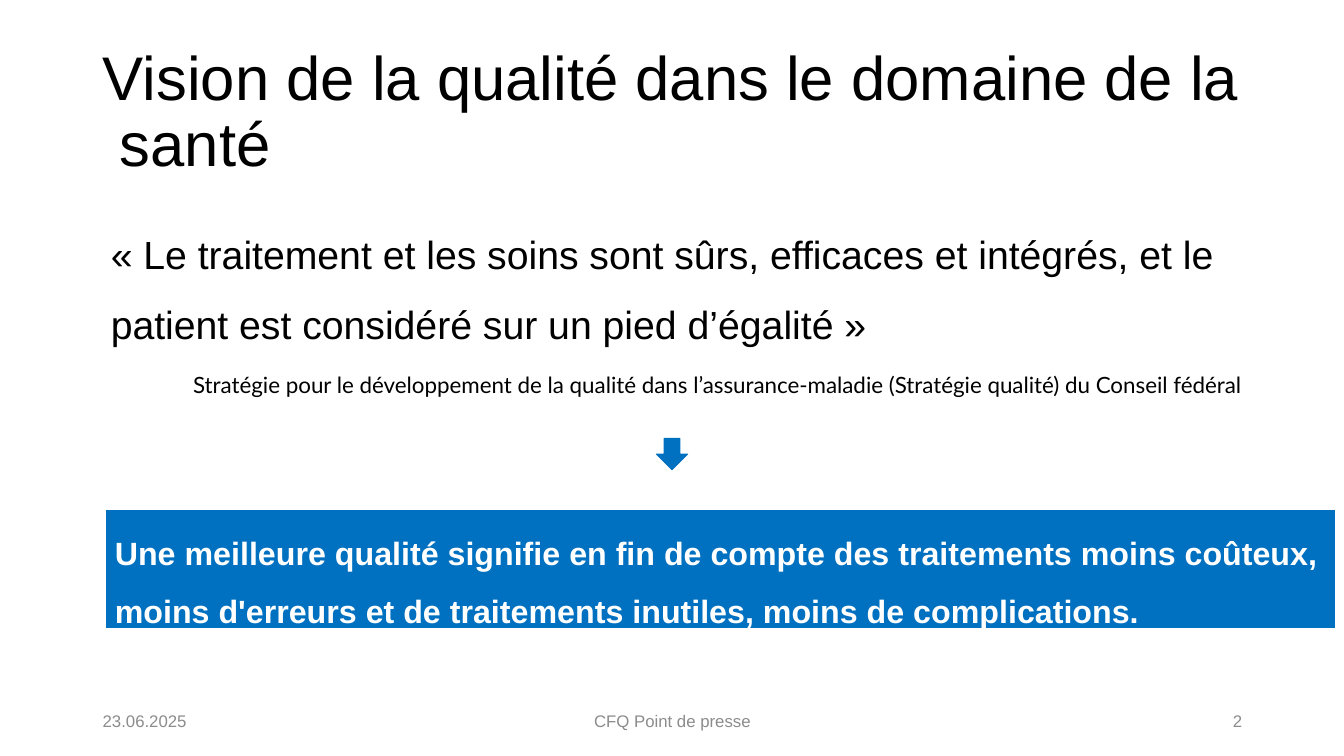
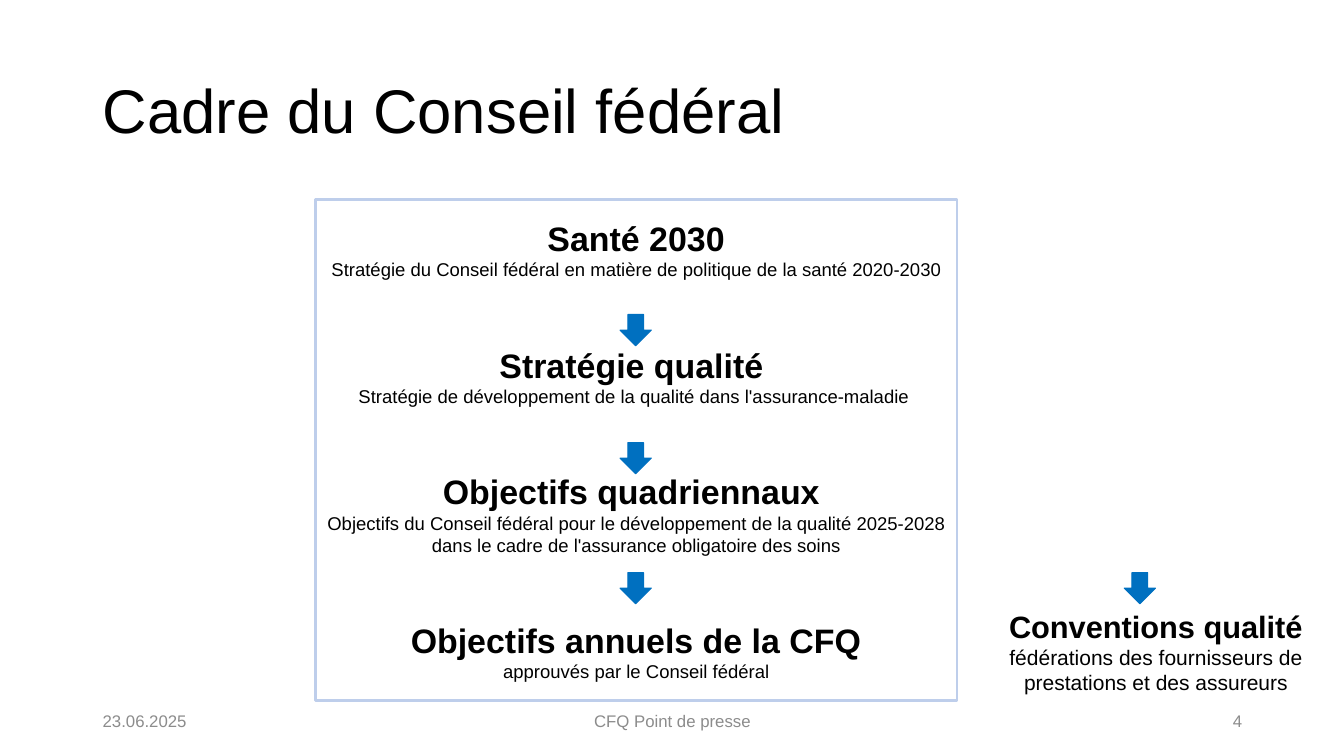
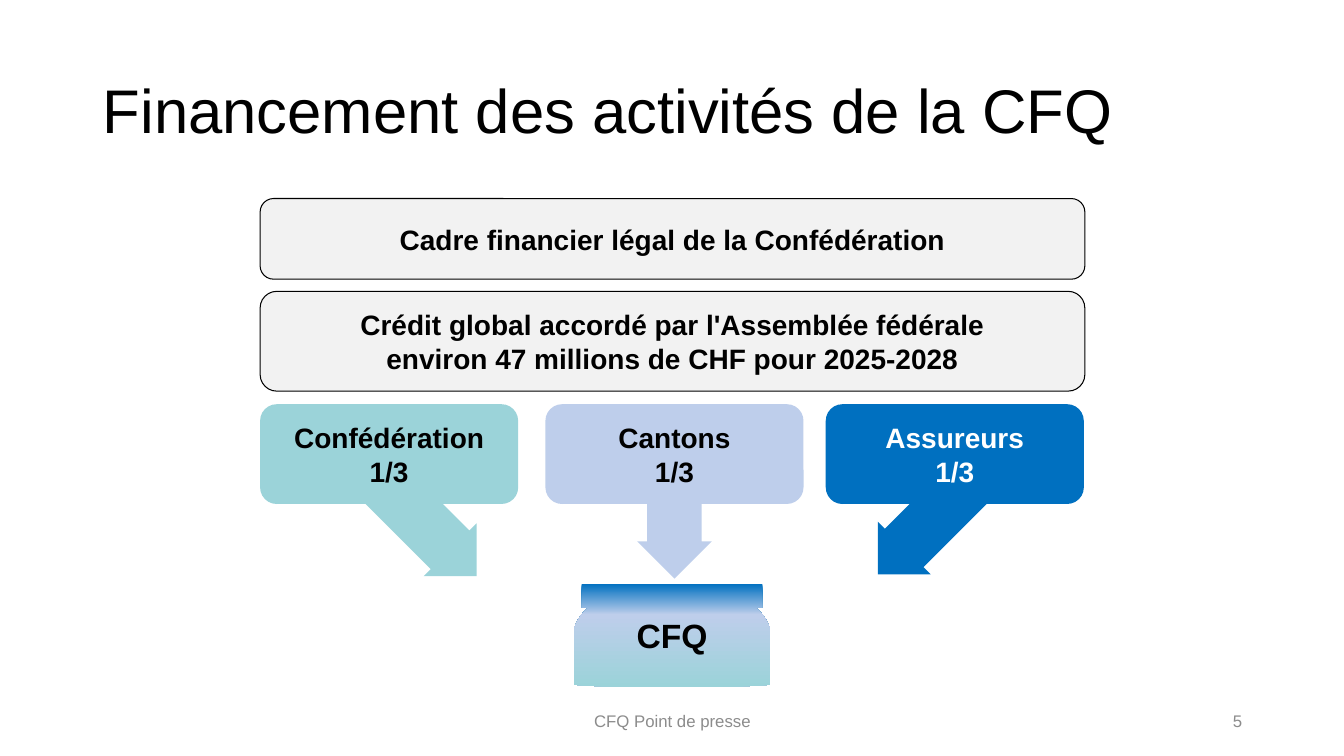
from copy import deepcopy

from pptx import Presentation, util as u
from pptx.dml import color
from pptx.enum import shapes, text
from pptx.oxml import ns

IN = u.Inches
KIND = shapes.MSO_SHAPE
ALIGN = text.PP_ALIGN
MID = text.MSO_ANCHOR.MIDDLE
TOP = text.MSO_ANCHOR.TOP

BLACK = "000000"
WHITE = "FFFFFF"
BLUE = "0070C0"
PALE = "BECEEB"
TEAL = "9BD3D9"
LIGHT = "F2F2F2"
GREY = "8C8C8C"


def rgb(code):
    return color.RGBColor.from_string(code)


def style(font, size, tint=BLACK, bold=False, face="Arial"):
    font.name = face
    font.size = u.Pt(size)
    font.bold = bold
    font.color.rgb = rgb(tint)


def write(shape, lines, size, tint=BLACK, bold=False, face="Arial",
          align=ALIGN.LEFT, anchor=TOP, space=1.0):
    frame = shape.text_frame
    frame.word_wrap = True
    frame.auto_size = text.MSO_AUTO_SIZE.NONE
    frame.vertical_anchor = anchor
    for i, line in enumerate(lines):
        para = frame.add_paragraph() if i else frame.paragraphs[0]
        para.text = line
        para.alignment = align
        para.line_spacing = space
        style(para.font, size, tint, bold, face)


def label(slide, box, line, size, **look):
    shape = slide.shapes.add_textbox(*map(IN, box))
    write(shape, [line], size, **look)


def block(slide, kind, box, fill=None, edge=None, width=0.75):
    shape = slide.shapes.add_shape(kind, *map(IN, box))
    shape.shadow.inherit = False
    if fill:
        shape.fill.solid()
        shape.fill.fore_color.rgb = rgb(fill)
    else:
        shape.fill.background()
    if edge:
        shape.line.color.rgb = rgb(edge)
        shape.line.width = u.Pt(width)
    else:
        shape.line.fill.background()
    return shape


def card(slide, box, lines, fill, tint=BLACK, edge=None):
    shape = block(slide, KIND.ROUNDED_RECTANGLE, box, fill, edge)
    write(shape, lines, 20, tint, True, align=ALIGN.CENTER, anchor=MID)


def arrow(slide, left, top):
    block(slide, KIND.DOWN_ARROW, (left, top, 0.31, 0.31), BLUE, BLUE)


def flow(slide, box, fill, turn):
    shape = block(slide, KIND.DOWN_ARROW, box, fill)
    shape.adjustments[0] = 0.73
    shape.adjustments[1] = 0.5
    shape.rotation = turn


def pair(para, head, note, big, small, split=True):
    para.alignment = ALIGN.CENTER
    run = para.add_run()
    run.text = head
    style(run.font, big, bold=True)
    if split:
        para.add_line_break()
    run = para.add_run()
    run.text = note
    style(run.font, small)


def page(deck, title, number, date=None):
    slide = deck.slides.add_slide(deck.slide_layouts[5])
    head = slide.shapes.title
    head.left, head.top, head.width, head.height = map(IN, (0.92, 0.4, 11.5, 1.45))
    write(head, [title], 44, anchor=MID, space=0.9)
    foot = [(0.92, 3, date, ALIGN.LEFT),
            (4.42, 4.5, "CFQ Point de presse", ALIGN.CENTER),
            (9.42, 3, str(number), ALIGN.RIGHT)]
    for left, width, line, align in foot:
        if line:
            label(slide, (left, 6.95, width, 0.4), line, 12, tint=GREY,
                  align=align, anchor=MID)
    return slide


def curve(a, b, c, d, steps=12):
    for i in range(1, steps + 1):
        t = i / steps
        s = 1 - t
        yield tuple(s**3 * p + 3 * s * s * t * q + 3 * s * t * t * r + t**3 * v
                    for p, q, r, v in zip(a, b, c, d))


def jar(slide):
    mid = 6.665
    right = [(7.56, 5.79), (7.56, 6.03), (7.5, 6.03), (7.52, 6.05),
             *curve((7.52, 6.05), (7.57, 6.1), (7.61, 6.16), (7.63, 6.22)),
             (7.64, 6.29), (7.64, 6.79),
             *curve((7.64, 6.79), (7.64, 6.8), (7.2, 6.82), (mid, 6.82))]
    left = [(2 * mid - x, y) for x, y in reversed(right)]
    points = [(x * 1000, y * 1000) for x, y in right + left]
    form = slide.shapes.build_freeform(*points[0], scale=914.4)
    form.add_line_segments(points[1:], close=True)
    shape = form.convert_to_shape()
    shape.shadow.inherit = False
    shape.line.fill.background()
    shape.fill.gradient()
    shape.fill.gradient_angle = 270
    stops = shape._element.spPr.find(ns.qn("a:gradFill")).find(ns.qn("a:gsLst"))
    stops.append(deepcopy(stops[0]))
    tints = [(0, BLUE), (0.3, PALE), (1, TEAL)]
    for stop, (place, tint) in zip(shape.fill.gradient_stops, tints):
        stop.position = place
        stop.color.rgb = rgb(tint)
    write(shape, ["CFQ"], 24, bold=True, align=ALIGN.CENTER, anchor=MID)


def vision(deck):
    slide = page(deck, "Vision de la qualité dans le domaine de la\n santé", 2, "23.06.2025")
    label(slide, (1, 2, 11.18, 1.67),
          "« Le traitement et les soins sont sûrs, efficaces et intégrés, "
          "et le patient est considéré sur un pied d’égalité »", 28, space=1.5)
    label(slide, (1.69, 3.63, 10.73, 0.37),
          "Stratégie pour le développement de la qualité dans "
          "l’assurance-maladie (Stratégie qualité) du Conseil fédéral",
          16, face="Lato", align=ALIGN.RIGHT)
    band = block(slide, KIND.RECTANGLE, (1.04, 5.05, 12.21, 1.19), BLUE, WHITE, 1)
    write(band, ["Une meilleure qualité signifie en fin de compte des traitements "
                 "moins coûteux, moins d'erreurs et de traitements inutiles, "
                 "moins de complications."], 23, WHITE, True, space=1.5)
    arrow(slide, 6.51, 4.35)


def council(deck):
    slide = page(deck, "Cadre du Conseil fédéral", 4, "23.06.2025")
    frame = block(slide, KIND.RECTANGLE, (3.13, 1.98, 6.36, 4.97), edge=PALE, width=1.5)
    body = frame.text_frame
    body.word_wrap = True
    body.vertical_anchor = MID
    steps = [
        ("Santé 2030",
         "Stratégie du Conseil fédéral en matière de politique de la santé 2020-2030"),
        ("Stratégie qualité ",
         "Stratégie de développement de la qualité dans l'assurance-maladie "),
        ("Objectifs quadriennaux ",
         "Objectifs du Conseil fédéral pour le développement de la qualité "
         "2025-2028 dans le cadre de l'assurance obligatoire des soins"),
        ("Objectifs annuels de la CFQ", "approuvés par le Conseil fédéral"),
    ]
    for i, (head, note) in enumerate(steps):
        para = body.add_paragraph() if i else body.paragraphs[0]
        if i:
            para.space_before = u.Pt(45.6)
        pair(para, head, note, 24.2, 13.2)
    for left, top in [(6.15, 3.12), (6.15, 4.39), (6.15, 5.68), (11.15, 5.68)]:
        arrow(slide, left, top)
    side = slide.shapes.add_textbox(*map(IN, (9.68, 5.98, 3.57, 1.01)))
    side.text_frame.word_wrap = True
    pair(side.text_frame.paragraphs[0], "Conventions qualité ",
         "fédérations des fournisseurs de prestations et des assureurs",
         22, 15, split=False)


def funding(deck):
    slide = page(deck, "Financement des activités de la CFQ", 5)
    card(slide, (2.58, 1.97, 8.18, 0.8),
         ["Cadre financier légal de la Confédération"], LIGHT, edge=BLACK)
    card(slide, (2.58, 2.89, 8.18, 0.99),
         ["Crédit global accordé par l'Assemblée fédérale",
          "environ 47 millions de CHF pour 2025-2028"], LIGHT, edge=BLACK)
    payers = [
        ("Confédération", 2.58, TEAL, BLACK, (3.77, 4.3, 0.74, 1.66), 315),
        ("Cantons", 5.41, PALE, BLACK, (6.32, 4.65, 0.74, 1.09), 0),
        ("Assureurs", 8.19, BLUE, WHITE, (8.92, 4.29, 0.74, 1.65), 45),
    ]
    for name, left, fill, tint, box, turn in payers:
        flow(slide, box, fill, turn)
        card(slide, (left, 4.01, 2.56, 0.99), [name, "1/3"], fill, tint)
    jar(slide)


def main():
    deck = Presentation()
    deck.slide_width = IN(13.33)
    deck.slide_height = IN(7.5)
    vision(deck)
    council(deck)
    funding(deck)
    deck.save("out.pptx")


if __name__ == "__main__":
    main()
